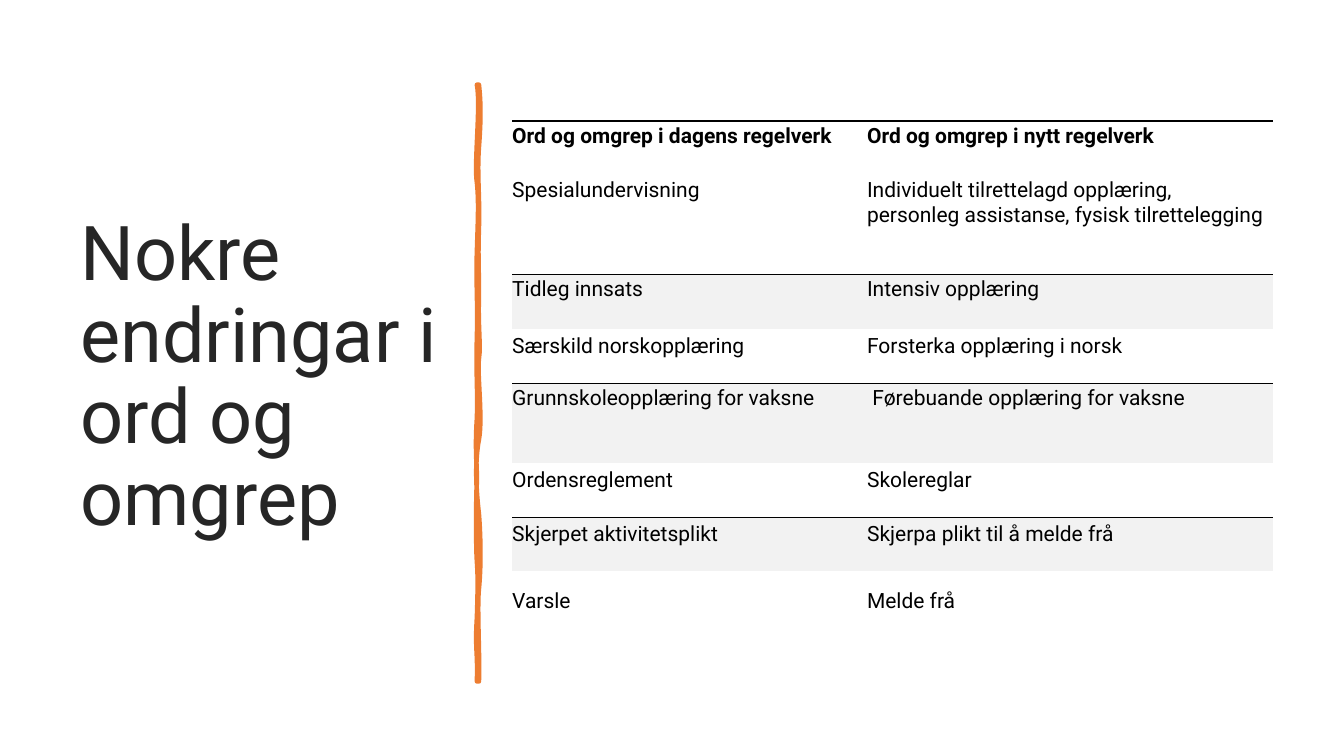
import lxml.etree
import pptx
import pptx.dml.color
import pptx.enum.text
import pptx.oxml.ns
import pptx.util

Inches = pptx.util.Inches
Pt = pptx.util.Pt
qn = pptx.oxml.ns.qn
TOP = pptx.enum.text.MSO_ANCHOR.TOP
MIDDLE = pptx.enum.text.MSO_ANCHOR.MIDDLE

FONT = "Roboto"
COLORS = {"title": "262626", "text": "000000", "bar": "ED7D31", "band": "F2F2F2"}
TITLE = "Nokre endringar i ord og omgrep"

# Old term, new term, row height, vertical anchor
TERMS = [
    ("Ord og omgrep i dagens regelverk", "Ord og omgrep i nytt regelverk", 0.54, TOP),
    ("Spesialundervisning ",
     "Individuelt tilrettelagd opplæring, personleg assistanse, fysisk tilrettelegging ",
     0.98, TOP),
    ("Tidleg innsats ", "Intensiv opplæring ", 0.54, TOP),
    ("Særskild norskopplæring", "Forsterka opplæring i norsk", 0.54, MIDDLE),
    ("Grunnskoleopplæring for vaksne", " Førebuande opplæring for vaksne", 0.79, TOP),
    ("Ordensreglement", "Skolereglar", 0.54, MIDDLE),
    ("Skjerpet aktivitetsplikt", "Skjerpa plikt til å melde frå", 0.54, MIDDLE),
    ("Varsle", "Melde frå", 0.79, MIDDLE),
]
COLUMN_WIDTHS = [3.52, 4.03]
BANDED_ROWS = {2, 4, 6}

# Bezier control points, three for each curve after the starting point
BAR_OUTLINE = [
    (4.75, 0.84),
    (4.77, 1.02), (4.77, 1.19), (4.75, 1.46), (4.73, 1.73), (4.76, 1.95), (4.75, 2.26),
    (4.74, 2.57), (4.75, 2.62), (4.75, 2.94), (4.74, 3.25), (4.77, 3.42), (4.75, 3.56),
    (4.73, 3.70), (4.79, 4.14), (4.75, 4.36), (4.71, 4.57), (4.72, 4.84), (4.75, 5.10),
    (4.77, 5.36), (4.77, 5.64), (4.75, 5.84), (4.73, 6.03), (4.76, 6.50), (4.75, 6.76),
    (4.74, 6.76), (4.73, 6.76), (4.73, 6.76), (4.74, 6.46), (4.71, 6.44), (4.73, 6.13),
    (4.74, 5.83), (4.74, 5.70), (4.73, 5.57), (4.72, 5.44), (4.72, 4.95), (4.73, 4.77),
    (4.73, 4.59), (4.71, 4.45), (4.73, 4.15), (4.74, 3.86), (4.72, 3.73), (4.73, 3.35),
    (4.74, 2.98), (4.72, 2.81), (4.73, 2.50), (4.74, 2.18), (4.75, 2.00), (4.73, 1.81),
    (4.70, 1.63), (4.77, 1.04), (4.73, 0.84), (4.74, 0.84), (4.74, 0.84), (4.75, 0.84),
]


def rgb(name):
    return pptx.dml.color.RGBColor.from_string(COLORS[name])


def style_paragraph(paragraph, size, color, bold=False):
    paragraph.font.name = FONT
    paragraph.font.size = Pt(size)
    paragraph.font.bold = bold
    paragraph.font.color.rgb = rgb(color)


def bend_lines(shape):
    """Turn every three line segments of a freeform into one cubic curve."""
    segments = list(shape._element.iter(qn("a:lnTo")))
    for start in range(0, len(segments), 3):
        curve = lxml.etree.Element(qn("a:cubicBezTo"))
        segments[start].addprevious(curve)
        for segment in segments[start:start + 3]:
            curve.append(segment[0])
            segment.getparent().remove(segment)


def set_borders(cell, widths):
    """Draw the sides named in widths (points) and clear the others."""
    properties = cell._tc.get_or_add_tcPr()
    for side in "LRTB":
        line = lxml.etree.SubElement(properties, qn(f"a:ln{side}"))
        if side in widths:
            line.set("w", str(Pt(widths[side])))
            fill = lxml.etree.SubElement(line, qn("a:solidFill"))
            lxml.etree.SubElement(fill, qn("a:srgbClr"), val=COLORS["text"])
        else:
            lxml.etree.SubElement(line, qn("a:noFill"))


def add_title(slide):
    box = slide.shapes.add_textbox(Inches(0.7), Inches(0.7), Inches(3.74), Inches(6.11))
    frame = box.text_frame
    frame.word_wrap = True
    frame.vertical_anchor = MIDDLE
    paragraph = frame.paragraphs[0]
    paragraph.text = TITLE
    paragraph.line_spacing = 0.9
    style_paragraph(paragraph, 54, "title")


def add_bar(slide):
    points = [(Inches(x), Inches(y)) for x, y in BAR_OUTLINE]
    builder = slide.shapes.build_freeform(*points[0])
    builder.add_line_segments(points[1:], close=True)
    bar = builder.convert_to_shape()
    bend_lines(bar)
    bar.shadow.inherit = False
    bar.fill.solid()
    bar.fill.fore_color.rgb = rgb("bar")
    bar.line.color.rgb = rgb("bar")
    bar.line.width = Pt(3.25)
    lxml.etree.SubElement(bar.line._get_or_add_ln(), qn("a:round"))


def add_terms_table(slide):
    heights = [height for _, _, height, _ in TERMS]
    table = slide.shapes.add_table(
        len(TERMS), len(COLUMN_WIDTHS), Inches(5.08), Inches(1.2),
        Inches(sum(COLUMN_WIDTHS)), Inches(sum(heights))).table
    table.first_row = False
    table.horz_banding = False
    for column, width in zip(table.columns, COLUMN_WIDTHS):
        column.width = Inches(width)
    for index, (old_term, new_term, height, anchor) in enumerate(TERMS):
        table.rows[index].height = Inches(height)
        borders = {}
        if index == 0:
            borders["T"] = 2.25
        if index in BANDED_ROWS:
            borders["T"] = 0.5
        if index + 1 in BANDED_ROWS:
            borders["B"] = 0.5
        for cell, term in zip(table.rows[index].cells, (old_term, new_term)):
            cell.margin_left = 0
            cell.margin_top = Inches(0.03)
            cell.margin_right = Inches(0.07)
            cell.margin_bottom = Inches(0.22)
            cell.vertical_anchor = anchor
            set_borders(cell, borders)
            if index in BANDED_ROWS:
                cell.fill.solid()
                cell.fill.fore_color.rgb = rgb("band")
            else:
                cell.fill.background()
            cell.text = term
            style_paragraph(cell.text_frame.paragraphs[0], 15, "text", bold=index == 0)


def main():
    presentation = pptx.Presentation()
    presentation.slide_width = Inches(13.33)
    presentation.slide_height = Inches(7.5)
    slide = presentation.slides.add_slide(presentation.slide_layouts[6])
    add_title(slide)
    add_bar(slide)
    add_terms_table(slide)
    presentation.save("out.pptx")


if __name__ == "__main__":
    main()
